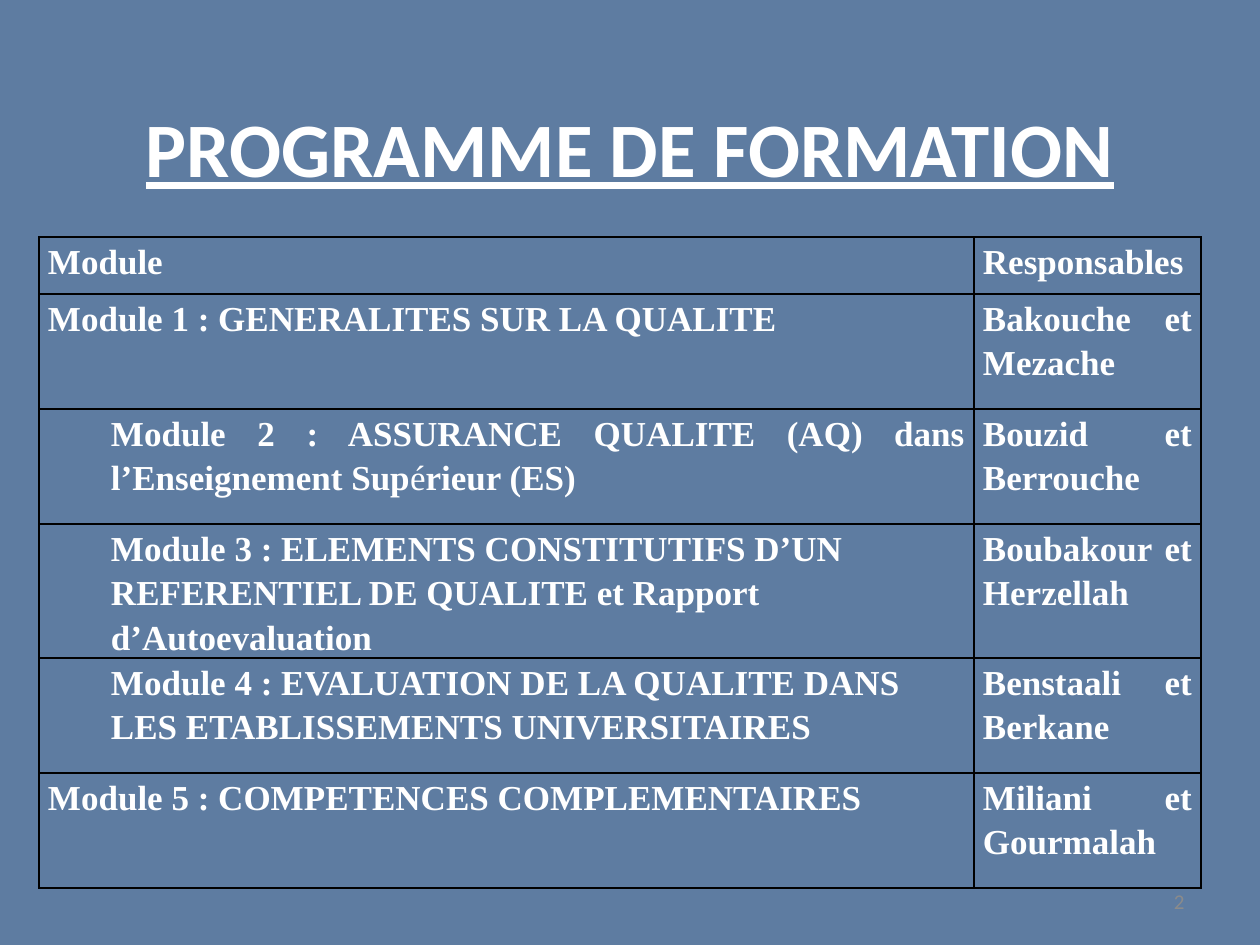
"""Builds the training programme slide with its table of modules."""
from lxml import etree
from pptx import Presentation
from pptx.dml.color import RGBColor
from pptx.enum.text import MSO_ANCHOR, PP_ALIGN
from pptx.oxml.ns import qn
from pptx.util import Emu, Pt

LEFT, CENTER, RIGHT, JUSTIFY = PP_ALIGN.LEFT, PP_ALIGN.CENTER, PP_ALIGN.RIGHT, PP_ALIGN.JUSTIFY
MIDDLE = MSO_ANCHOR.MIDDLE
PX = 914400 // 126
COLORS = {"background": "5E7CA1", "text": "FFFFFF", "border": "000000", "number": "8B8B8B"}

TITLE = "PROGRAMME DE FORMATION"
SLIDE_NUMBER = "2"
HEADER = (["Module"], JUSTIFY, 0, "Responsables")
MODULES = [
    (["Module 1 : GENERALITES SUR LA QUALITE "], JUSTIFY, 0, "Bakouche et Mezache"),
    (["Module 2 : ASSURANCE QUALITE (AQ) dans l’Enseignement Sup", "é", "rieur (ES)"],
     JUSTIFY, 63, "Bouzid et Berrouche"),
    (["Module 3 : ELEMENTS CONSTITUTIFS D’UN REFERENTIEL DE QUALITE et Rapport d’Autoevaluation"],
     LEFT, 63, "Boubakour et Herzellah"),
    (["Module 4 : EVALUATION DE LA QUALITE DANS LES ETABLISSEMENTS UNIVERSITAIRES"],
     LEFT, 63, "Benstaali et Berkane"),
    (["Module 5 : COMPETENCES COMPLEMENTAIRES"], LEFT, 0, "Miliani et Gourmalah"),
]

TITLE_BOX = (63, 97, 1134, 100)
TABLE_ORIGIN = (39, 237)
COLUMN_WIDTHS = (935, 227)
HEADER_HEIGHT, MODULE_HEIGHT = 57, 115
NUMBER_BOX = (903, 876, 294, 50)

TITLE_FONT = {"name": "Calibri", "size": Pt(44), "bold": True, "underline": True}
CELL_FONT = {"name": "Times New Roman", "size": Pt(20)}
NUMBER_FONT = {"name": "Calibri", "size": Pt(12)}
CELL_PARAGRAPH = {"line_spacing": 1.15, "space_before": Pt(6)}
CELL_MARGINS = {"margin_left": 9 * PX, "margin_right": 9 * PX, "margin_top": 0, "margin_bottom": 0}


def emu(lengths):
    return [Emu(length * PX) for length in lengths]


def apply(target, values):
    for name, value in values.items():
        setattr(target, name, value)


def add_run(paragraph, text, font, color):
    run = paragraph.add_run()
    run.text = text
    apply(run.font, font)
    run.font.color.rgb = RGBColor.from_string(COLORS[color])


def add_borders(cell):
    properties = cell._tc.get_or_add_tcPr()
    for index, side in enumerate(("lnL", "lnR", "lnT", "lnB")):
        line = etree.Element(qn(f"a:{side}"), w=str(Pt(1)))
        fill = etree.SubElement(line, qn("a:solidFill"))
        etree.SubElement(fill, qn("a:srgbClr"), val=COLORS["border"])
        properties.insert(index, line)


def fill_cell(cell, runs, alignment, indent):
    apply(cell, CELL_MARGINS)
    cell.fill.background()
    add_borders(cell)
    paragraph = cell.text_frame.paragraphs[0]
    apply(paragraph, {**CELL_PARAGRAPH, "alignment": alignment})
    if indent:
        paragraph._p.get_or_add_pPr().set("marL", str(indent * PX))
    for index, text in enumerate(runs):
        add_run(paragraph, text, {**CELL_FONT, "bold": index % 2 == 0}, "text")


def add_title(slide):
    title = slide.shapes.title
    apply(title, dict(zip(("left", "top", "width", "height"), emu(TITLE_BOX))))
    title.text_frame.vertical_anchor = MIDDLE
    paragraph = title.text_frame.paragraphs[0]
    paragraph.alignment = CENTER
    add_run(paragraph, TITLE, TITLE_FONT, "text")


def add_module_table(slide):
    rows = [HEADER, *MODULES]
    heights = [HEADER_HEIGHT] + [MODULE_HEIGHT] * len(MODULES)
    box = (*TABLE_ORIGIN, sum(COLUMN_WIDTHS), sum(heights))
    table = slide.shapes.add_table(len(rows), len(COLUMN_WIDTHS), *emu(box)).table
    apply(table, {"first_row": False, "horz_banding": False})
    for column, width in zip(table.columns, emu(COLUMN_WIDTHS)):
        column.width = width
    for row, height, (module, alignment, indent, leaders) in zip(table.rows, emu(heights), rows):
        row.height = height
        fill_cell(row.cells[0], module, alignment, indent)
        fill_cell(row.cells[1], [leaders], JUSTIFY, 0)


def add_slide_number(slide):
    frame = slide.shapes.add_textbox(*emu(NUMBER_BOX)).text_frame
    apply(frame, {"word_wrap": True, "vertical_anchor": MIDDLE})
    frame.paragraphs[0].alignment = RIGHT
    add_run(frame.paragraphs[0], SLIDE_NUMBER, NUMBER_FONT, "number")


def main():
    presentation = Presentation()
    presentation.slide_width, presentation.slide_height = emu((1260, 945))
    slide = presentation.slides.add_slide(presentation.slide_layouts[5])
    slide.background.fill.solid()
    slide.background.fill.fore_color.rgb = RGBColor.from_string(COLORS["background"])
    add_title(slide)
    add_module_table(slide)
    add_slide_number(slide)
    presentation.save("out.pptx")


if __name__ == "__main__":
    main()
